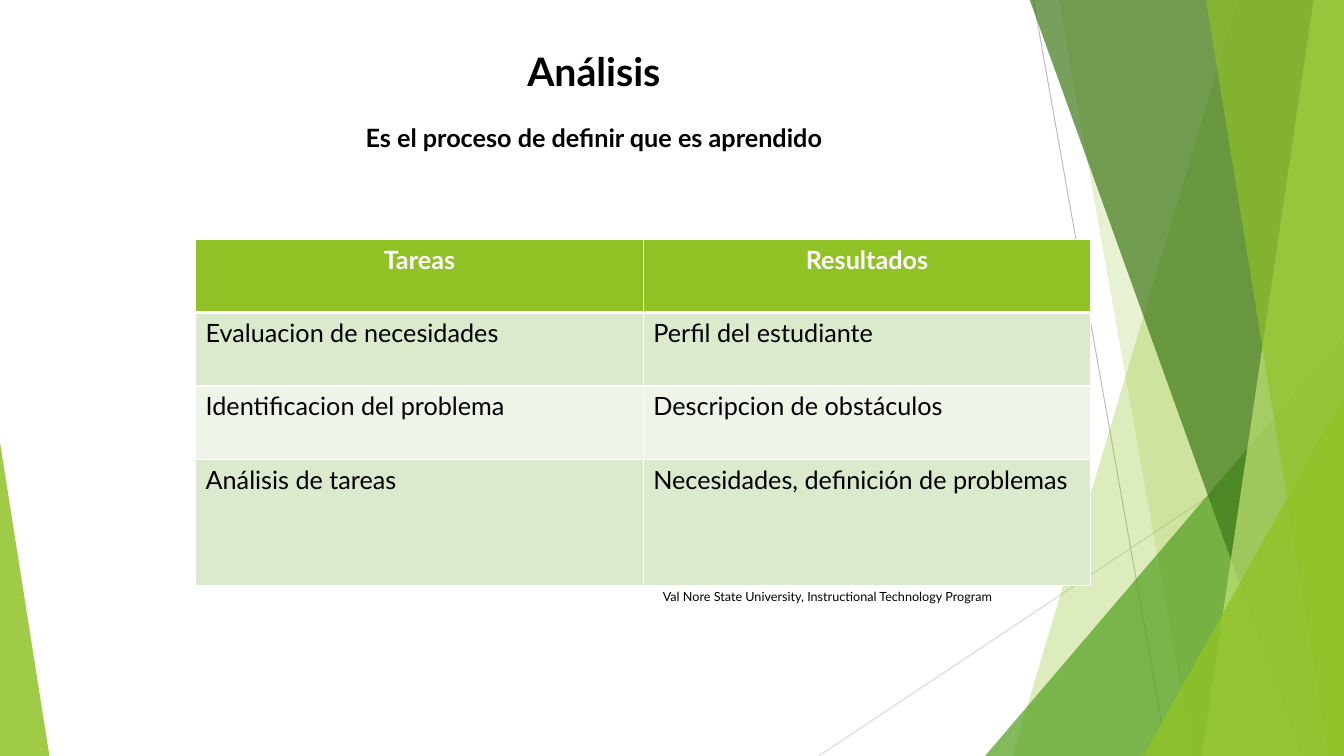
from dataclasses import dataclass

from lxml import etree
from pptx import Presentation
from pptx.dml.color import RGBColor
from pptx.enum.shapes import MSO_CONNECTOR, MSO_SHAPE
from pptx.enum.text import MSO_AUTO_SIZE, PP_ALIGN
from pptx.oxml.ns import qn
from pptx.util import Inches, Pt

STRAIGHT = MSO_CONNECTOR.STRAIGHT
TRIANGLE = MSO_SHAPE.ISOSCELES_TRIANGLE
GROW = MSO_AUTO_SIZE.SHAPE_TO_FIT_TEXT
CENTER = PP_ALIGN.CENTER
LEFT = PP_ALIGN.LEFT


@dataclass(frozen=True)
class Theme:
    font: str = "Lato"
    title: int = 28
    body: int = 18
    credit: int = 9
    text: str = "000000"
    white: str = "FFFFFF"
    lime: str = "90C226"
    pale_lime: str = "C0E474"
    green: str = "54A021"
    dark_green: str = "3F7819"
    gray: str = "BFBFBF"
    light_gray: str = "D9D9D9"
    band: str = "DBE9CD"
    light_band: str = "EEF4E8"


def write(para, text, theme, size, color=None, bold=False, align=LEFT, before=0):
    para.alignment = align
    para.space_before = Pt(before)
    span = para.add_run()
    span.text = text
    span.font.name = theme.font
    span.font.size = Pt(size)
    span.font.bold = bold
    span.font.color.rgb = RGBColor.from_string(color or theme.text)


class SlidePainter:
    def __init__(self, page, theme):
        self.page = page
        self.theme = theme

    def paint(self, shape, color, opacity):
        shape.shadow.inherit = False
        shape.line.fill.background()
        shape.fill.solid()
        shape.fill.fore_color.rgb = RGBColor.from_string(color)
        tint = shape.fill._xPr.find(f".//{qn('a:srgbClr')}")
        etree.SubElement(tint, qn("a:alpha"), val=str(opacity * 1000))

    def line(self, start, end, color):
        ends = [Inches(value) for value in (*start, *end)]
        connector = self.page.shapes.add_connector(STRAIGHT, *ends)
        connector.line.color.rgb = RGBColor.from_string(color)
        connector.line.width = Pt(0.75)
        etree.SubElement(connector._element.spPr, qn("a:effectLst"))

    def ribbon(self, top_left, bottom_left, color, opacity):
        top, bottom, right = -0.01, 7.5, 13.33
        corners = [(right, top), (right, bottom), (bottom_left, bottom)]
        builder = self.page.shapes.build_freeform(Inches(top_left), Inches(top))
        builder.add_line_segments([(Inches(x), Inches(y)) for x, y in corners])
        self.paint(builder.convert_to_shape(), color, opacity)

    def triangle(self, left, top, width, apex, color, opacity):
        shape = self.page.shapes.add_shape(
            TRIANGLE, Inches(left), Inches(top), Inches(width), Inches(7.5 - top))
        shape.adjustments[0] = apex
        self.paint(shape, color, opacity)

    def text_box(self, left, top, width, height, indent=0.1):
        box = self.page.shapes.add_textbox(
            Inches(left), Inches(top), Inches(width), Inches(height))
        box.text_frame.word_wrap = True
        box.text_frame.margin_left = Inches(indent)
        return box.text_frame

    def border(self, cell, side, width):
        properties = cell._tc.get_or_add_tcPr()
        edge = etree.SubElement(properties, qn(f"a:ln{side}"), w=str(Pt(width)))
        fill = etree.SubElement(edge, qn("a:solidFill"))
        etree.SubElement(fill, qn("a:srgbClr"), val=self.theme.white)

    def table(self, left, top, column_width, heights, rows):
        theme = self.theme
        columns = len(rows[0])
        table = self.page.shapes.add_table(
            len(rows), columns, Inches(left), Inches(top),
            Inches(column_width * columns), Inches(sum(heights))).table
        for column in table.columns:
            column.width = Inches(column_width)
        for row_index, texts in enumerate(rows):
            table.rows[row_index].height = Inches(heights[row_index])
            header = row_index == 0
            band = theme.band if row_index % 2 else theme.light_band
            edges = {"L": 1, "R": 1, "T": 3 if row_index == 1 else 1,
                     "B": 3 if header else 1}
            for column_index, text in enumerate(texts):
                cell = table.cell(row_index, column_index)
                for side, width in edges.items():
                    self.border(cell, side, width)
                cell.fill.solid()
                cell.fill.fore_color.rgb = RGBColor.from_string(
                    theme.lime if header else band)
                write(cell.text_frame.paragraphs[0], text, theme, theme.body,
                      color=theme.white if header else theme.text,
                      bold=header, align=CENTER if header else LEFT)


def draw_background(painter):
    theme = painter.theme
    painter.line((10.25, 0), (11.58, 7.5), theme.gray)
    painter.line((13.33, 4.03), (8.12, 7.5), theme.light_gray)
    painter.ribbon(12.28, 10.04, theme.lime, 30)
    painter.ribbon(10.5, 11.83, theme.lime, 20)
    painter.triangle(9.77, 3.33, 3.56, 1, theme.green, 72)
    painter.ribbon(10.21, 12.91, theme.dark_green, 70)
    painter.ribbon(13.03, 11.92, theme.pale_lime, 70)
    painter.ribbon(11.96, 13.18, theme.lime, 65)
    painter.triangle(11.34, 3.93, 1.99, 1, theme.lime, 80)
    painter.triangle(0, 4.39, 0.49, 0, theme.lime, 85)


def draw_content(painter):
    theme = painter.theme
    heading = painter.text_box(0.62, 0.42, 9.33, 1.36, indent=1.31)
    write(heading.paragraphs[0], "Análisis", theme, theme.title,
          bold=True, align=CENTER)
    write(heading.add_paragraph(), "Es el proceso de definir que es aprendido",
          theme, theme.body, bold=True, align=CENTER, before=20)
    painter.table(1.94, 2.38, 4.44, [0.72, 0.73, 0.73, 1.25], [
        ("Tareas", "Resultados"),
        ("Evaluacion de necesidades", "Perfil del estudiante"),
        ("Identificacion del problema", "Descripcion de obstáculos"),
        ("Análisis de tareas", "Necesidades, definición de problemas"),
    ])
    credit = painter.text_box(4.87, 5.79, 6.67, 0.25)
    credit.auto_size = GROW
    write(credit.paragraphs[0],
          "Val Nore State University, Instructional Technology Program",
          theme, theme.credit, align=CENTER)


def main():
    deck = Presentation()
    deck.slide_width = Inches(13.33)
    deck.slide_height = Inches(7.5)
    page = deck.slides.add_slide(deck.slide_layouts[6])
    painter = SlidePainter(page, Theme())
    draw_background(painter)
    draw_content(painter)
    deck.save("out.pptx")


if __name__ == "__main__":
    main()
